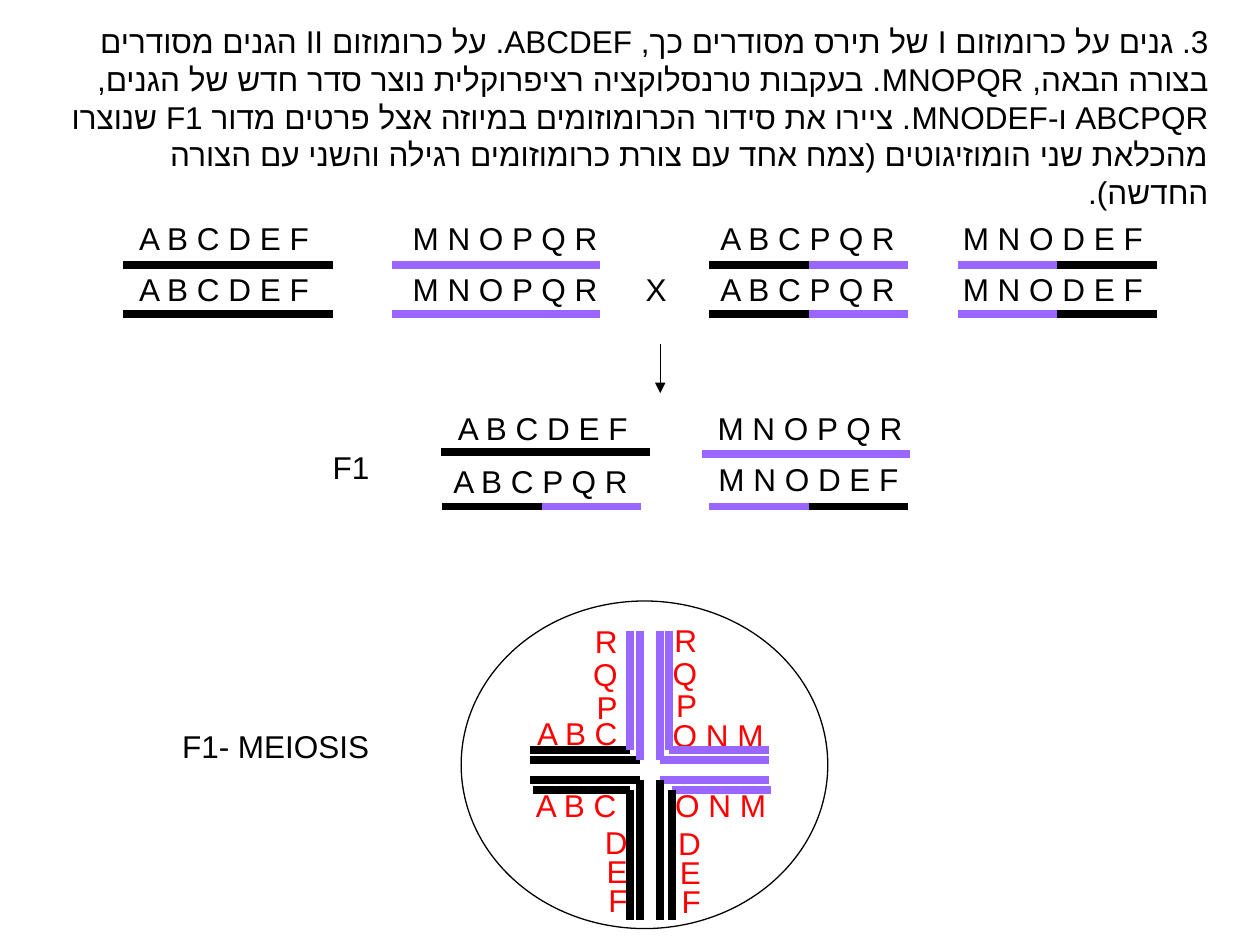
from lxml.etree import SubElement
from pptx import Presentation
from pptx.dml.color import RGBColor
from pptx.enum.shapes import MSO_CONNECTOR, MSO_SHAPE
from pptx.enum.text import MSO_ANCHOR, MSO_AUTO_SIZE, PP_ALIGN
from pptx.oxml.ns import qn
from pptx.util import Inches, Pt

COLORS = {"black": "000000", "purple": "9966FF", "red": "FF0000"}

prs = Presentation()
prs.slide_width, prs.slide_height = Inches(10), Inches(7.5)
slide = prs.slides.add_slide(prs.slide_layouts[6])


def add_label(text, left, top, width, height=0.4, color="black", before=0, spacing=None, wrap=True):
    """Add right-to-left text; before is the space above as a percentage."""
    box = slide.shapes.add_textbox(Inches(left), Inches(top), Inches(width), Inches(height))
    frame = box.text_frame
    frame.text = text
    frame.word_wrap = wrap
    frame.auto_size = MSO_AUTO_SIZE.SHAPE_TO_FIT_TEXT
    for paragraph in frame.paragraphs:
        paragraph.alignment = PP_ALIGN.RIGHT
        if spacing:
            paragraph.line_spacing = spacing
        properties = paragraph._p.get_or_add_pPr()
        properties.set("rtl", "1")
        if before:
            space = SubElement(properties, qn("a:spcBef"))
            SubElement(space, qn("a:spcPct")).set("val", str(before * 1000))
        for run in paragraph.runs:
            run.font.size = Pt(18)
            run.font.name = "Arial"
            run.font.color.rgb = RGBColor.from_string(COLORS[color])
            SubElement(run._r.get_or_add_rPr(), qn("a:cs")).set("typeface", "Arial")
    return frame


def add_line(x1, y1, x2, y2, color="black", weight=4.5):
    line = slide.shapes.add_connector(
        MSO_CONNECTOR.STRAIGHT, Inches(x1), Inches(y1), Inches(x2), Inches(y2))
    line.line.color.rgb = RGBColor.from_string(COLORS[color])
    line.line.width = Pt(weight)
    SubElement(line._element.spPr, qn("a:effectLst"))
    return line


question = add_label(
    "3. גנים על כרומוזום I של תירס מסודרים כך, ABCDEF. על כרומוזום II הגנים מסודרים בצורה הבאה, "
    "MNOPQR. בעקבות טרנסלוקציה רציפרוקלית נוצר סדר חדש של הגנים, ABCPQR ו-MNODEF. "
    "ציירו את סידור הכרומוזומים במיוזה אצל פרטים מדור F1 שנוצרו מהכלאת שני הומוזיגוטים "
    "(צמח אחד עם צורת כרומוזומים רגילה והשני עם הצורה החדשה).",
    0.26, 0.27, 9.43, 1.31)
question.vertical_anchor = MSO_ANCHOR.MIDDLE

# Genes: label width, segment length, segment colours
CHROMOSOMES = {
    "A B C D E F": (1.65, 1.66, ["black"]),
    "M N O P Q R": (1.89, 1.65, ["purple"]),
    "A B C P Q R": (1.65, 0.79, ["black", "purple"]),
    "M N O D E F": (1.89, 0.79, ["purple", "black"]),
}
# Genes, label left, label top, bar left, bar height on the slide
parents = [("A B C D E F", 0.9, 0.98), ("M N O P Q R", 2.95, 3.11),
           ("A B C P Q R", 5.55, 5.63), ("M N O D E F", 7.28, 7.6)]
placed = [(genes, label_x, top, bar_x, bar_y)
          for genes, label_x, bar_x in parents
          for top, bar_y in [(1.69, 2.1), (2.09, 2.49)]]
placed += [("A B C D E F", 3.43, 3.2, 3.5, 3.59), ("M N O P Q R", 5.37, 3.2, 5.57, 3.6),
           ("A B C P Q R", 3.43, 3.62, 3.51, 4.02), ("M N O D E F", 5.34, 3.6, 5.63, 4.02)]
for genes, label_x, top, bar_x, bar_y in placed:
    width, length, segments = CHROMOSOMES[genes]
    add_label(genes, label_x, top, width, before=50)
    for i, color in enumerate(segments):
        add_line(bar_x + i * length, bar_y, bar_x + (i + 1) * length, bar_y, color)

for text, left, top, width in [("X", 4.92, 2.09, 0.47), ("F1", 1.06, 3.51, 1.97),
                               ("F1- MEIOSIS", 1.06, 5.72, 1.97)]:
    add_label(text, left, top, width, before=50)

cross_arrow = add_line(5.24, 2.73, 5.24, 3.12, weight=0.75)
SubElement(cross_arrow.line._get_or_add_ln(), qn("a:tailEnd")).set("type", "triangle")

cell = slide.shapes.add_shape(
    MSO_SHAPE.OVAL, Inches(3.66), Inches(4.77), Inches(2.91), Inches(2.6))
cell.shadow.inherit = False
cell.fill.background()
cell.line.color.rgb = RGBColor.from_string(COLORS["black"])
cell.line.width = Pt(0.75)

# Gene letters around the meiotic cross
for left, top in [(4.21, 4.97), (4.84, 4.96)]:
    add_label("R\nQ\nP", left, top, 0.79, 0.85, "red", before=20, spacing=0.7)
for left, top in [(4.61, 6.59), (5.19, 6.6)]:
    add_label("D \nE \nF ", left, top, 0.47, 0.76, "red", before=20, spacing=0.6)
for text, left, top, width in [("A B C", 4.16, 5.62, 0.84), ("A B C", 4.15, 6.19, 0.84),
                               ("O N M", 5.23, 5.63, 0.93), ("O N M", 5.25, 6.19, 0.93)]:
    add_label(text, left, top, width, color="red", wrap=False)

# Each chromatid bends at a corner: corner x, corner y, arm end x, arm end y, colours
chromatids = [
    (5, 5.95, 4.21, 5.01, "black", "purple"),
    (5.08, 6.03, 4.21, 5.01, "black", "purple"),
    (5.31, 5.95, 6.1, 5.01, "purple", "purple"),
    (5.24, 6.03, 6.1, 5.01, "purple", "purple"),
    (5, 6.27, 4.23, 7.3, "black", "black"),
    (5.08, 6.19, 4.21, 7.3, "black", "black"),
    (5.33, 6.27, 6.12, 7.3, "purple", "black"),
    (5.24, 6.19, 6.1, 7.3, "purple", "black"),
]
for x, y, side_x, end_y, side_color, upright_color in chromatids:
    add_line(x, y, side_x, y, side_color)
    add_line(x, y, x, end_y, upright_color)

prs.save("out.pptx")
